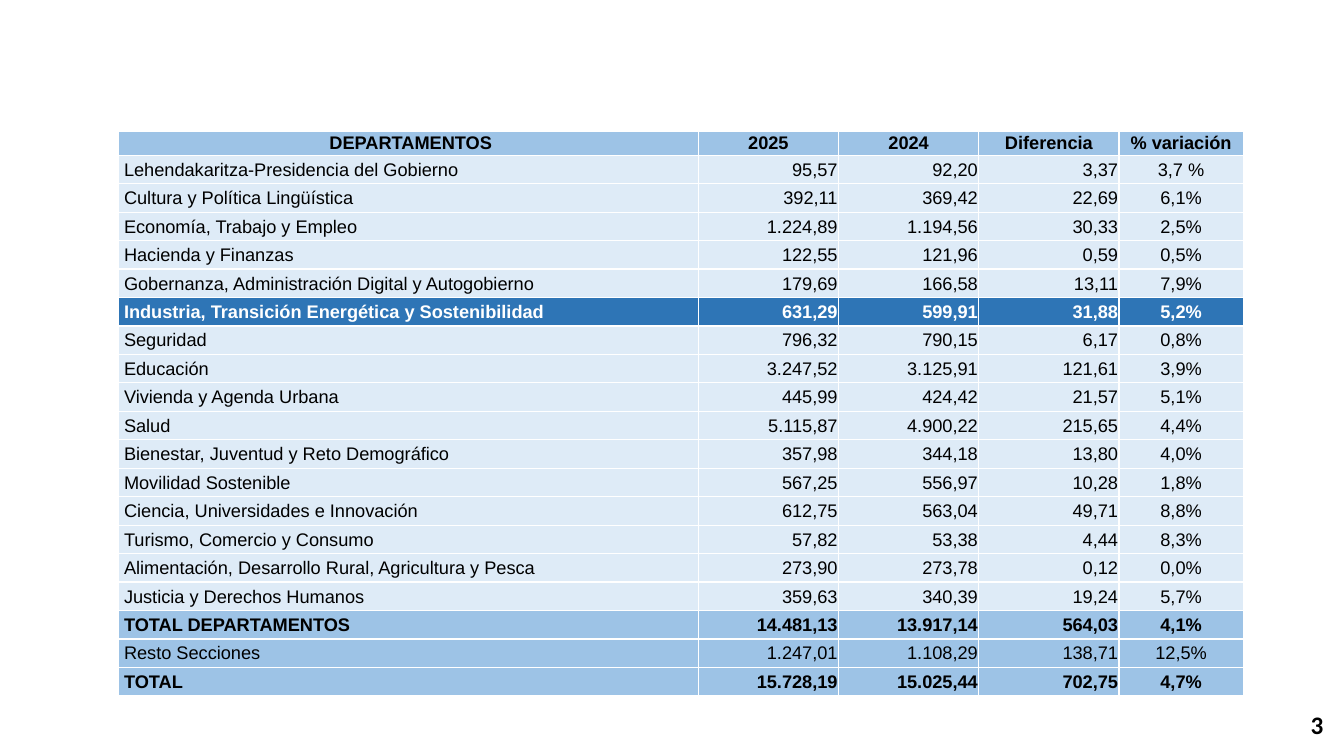
import dataclasses

import pptx
import pptx.dml.color
import pptx.enum.text
import pptx.oxml
import pptx.oxml.ns
import pptx.util

Inches = pptx.util.Inches
Pt = pptx.util.Pt
RGB = pptx.dml.color.RGBColor.from_string
ALIGN = pptx.enum.text.PP_ALIGN


@dataclasses.dataclass(frozen=True)
class Theme:
    ink: str = "000000"
    white: str = "FFFFFF"
    pale: str = "DEEBF7"
    mid: str = "9DC3E6"
    deep: str = "2E75B6"
    face: str = "Arial"
    size: float = 13
    page_face: str = "Calibri"
    page_size: float = 18
    rule: float = 1


THEME = Theme()

# Row kind: fill, text colour, bold
KINDS = {
    "head": (THEME.mid, THEME.ink, True),
    "plain": (THEME.pale, THEME.ink, False),
    "focus": (THEME.deep, THEME.white, True),
    "total": (THEME.mid, THEME.ink, True),
    "rest": (THEME.mid, THEME.ink, False),
}

WIDTHS = [5.75, 1.39, 1.39, 1.39, 1.23]
ALIGNS = [ALIGN.LEFT, ALIGN.RIGHT, ALIGN.RIGHT, ALIGN.RIGHT, ALIGN.CENTER]
HEAD = 0.24

ROWS = [
    ("head", "DEPARTAMENTOS", "2025", "2024", "Diferencia", "% variación"),
    ("plain", "Lehendakaritza-Presidencia del Gobierno", "95,57", "92,20", "3,37", "3,7 %"),
    ("plain", "Cultura y Política Lingüística", "392,11", "369,42", "22,69", "6,1%"),
    ("plain", "Economía, Trabajo y Empleo", "1.224,89", "1.194,56", "30,33", "2,5%"),
    ("plain", "Hacienda y Finanzas", "122,55", "121,96", "0,59", "0,5%"),
    ("plain", "Gobernanza, Administración Digital y Autogobierno", "179,69", "166,58", "13,11", "7,9%"),
    ("focus", "Industria, Transición Energética y Sostenibilidad", "631,29", "599,91", "31,88", "5,2%"),
    ("plain", "Seguridad", "796,32", "790,15", "6,17", "0,8%"),
    ("plain", "Educación", "3.247,52", "3.125,91", "121,61", "3,9%"),
    ("plain", "Vivienda y Agenda Urbana", "445,99", "424,42", "21,57", "5,1%"),
    ("plain", "Salud", "5.115,87", "4.900,22", "215,65", "4,4%"),
    ("plain", "Bienestar, Juventud y Reto Demográfico", "357,98", "344,18", "13,80", "4,0%"),
    ("plain", "Movilidad Sostenible", "567,25", "556,97", "10,28", "1,8%"),
    ("plain", "Ciencia, Universidades e Innovación", "612,75", "563,04", "49,71", "8,8%"),
    ("plain", "Turismo, Comercio y Consumo", "57,82", "53,38", "4,44", "8,3%"),
    ("plain", "Alimentación, Desarrollo Rural, Agricultura y Pesca", "273,90", "273,78", "0,12", "0,0%"),
    ("plain", "Justicia y Derechos Humanos", "359,63", "340,39", "19,24", "5,7%"),
    ("total", "TOTAL DEPARTAMENTOS", "14.481,13", "13.917,14", "564,03", "4,1%"),
    ("rest", "Resto Secciones", "1.247,01", "1.108,29", "138,71", "12,5%"),
    ("total", "TOTAL", "15.728,19", "15.025,44", "702,75", "4,7%"),
]


def set_font(para, face, size, color, bold):
    for name, value in {"name": face, "size": Pt(size), "bold": bold}.items():
        setattr(para.font, name, value)
    para.font.color.rgb = RGB(color)


def add_rules(cell):
    """Draw the four cell borders; call before the fill is set."""
    props = cell._tc.get_or_add_tcPr()
    for side in ("lnL", "lnR", "lnT", "lnB"):
        props.append(pptx.oxml.parse_xml(
            f'<a:{side} {pptx.oxml.ns.nsdecls("a")} w="{Pt(THEME.rule)}">'
            f'<a:solidFill><a:srgbClr val="{THEME.white}"/></a:solidFill></a:{side}>'))


def fill_cell(cell, text, kind, col):
    fill, color, bold = KINDS[kind]
    add_rules(cell)
    cell.fill.solid()
    cell.fill.fore_color.rgb = RGB(fill)
    cell.vertical_anchor = pptx.enum.text.MSO_ANCHOR.MIDDLE
    margins = {"left": 0.01 if col else 0.06, "right": 0.01, "top": 0.01, "bottom": 0}
    for side, gap in margins.items():
        setattr(cell, f"margin_{side}", Inches(gap))
    cell.text = text
    para = cell.text_frame.paragraphs[0]
    para.alignment = ALIGN.CENTER if kind == "head" else ALIGNS[col]
    set_font(para, THEME.face, THEME.size, color, bold)


def add_budget(slide, left, top, width, height):
    box = [Inches(n) for n in (left, top, width, height)]
    table = slide.shapes.add_table(len(ROWS), len(WIDTHS), *box).table
    table.first_row = table.horz_banding = False
    for column, part in zip(table.columns, WIDTHS):
        column.width = Inches(width * part / sum(WIDTHS))
    step = (height - HEAD) / (len(ROWS) - 1)
    for r, (kind, *texts) in enumerate(ROWS):
        table.rows[r].height = Inches(step if r else HEAD)
        for c, text in enumerate(texts):
            fill_cell(table.cell(r, c), text, kind, c)


def add_page(slide, left, top, width, height):
    box = [Inches(n) for n in (left, top, width, height)]
    frame = slide.shapes.add_textbox(*box).text_frame
    frame.word_wrap = True
    frame.text = "3"
    set_font(frame.paragraphs[0], THEME.page_face, THEME.page_size, THEME.ink, True)


def main():
    deck = pptx.Presentation()
    deck.slide_width, deck.slide_height = Inches(13.33), Inches(7.5)
    slide = deck.slides.add_slide(deck.slide_layouts[6])
    add_budget(slide, 1.17, 1.3, 11.16, 5.61)
    add_page(slide, 12.9, 6.99, 0.32, 0.4)
    deck.save("out.pptx")


if __name__ == "__main__":
    main()
